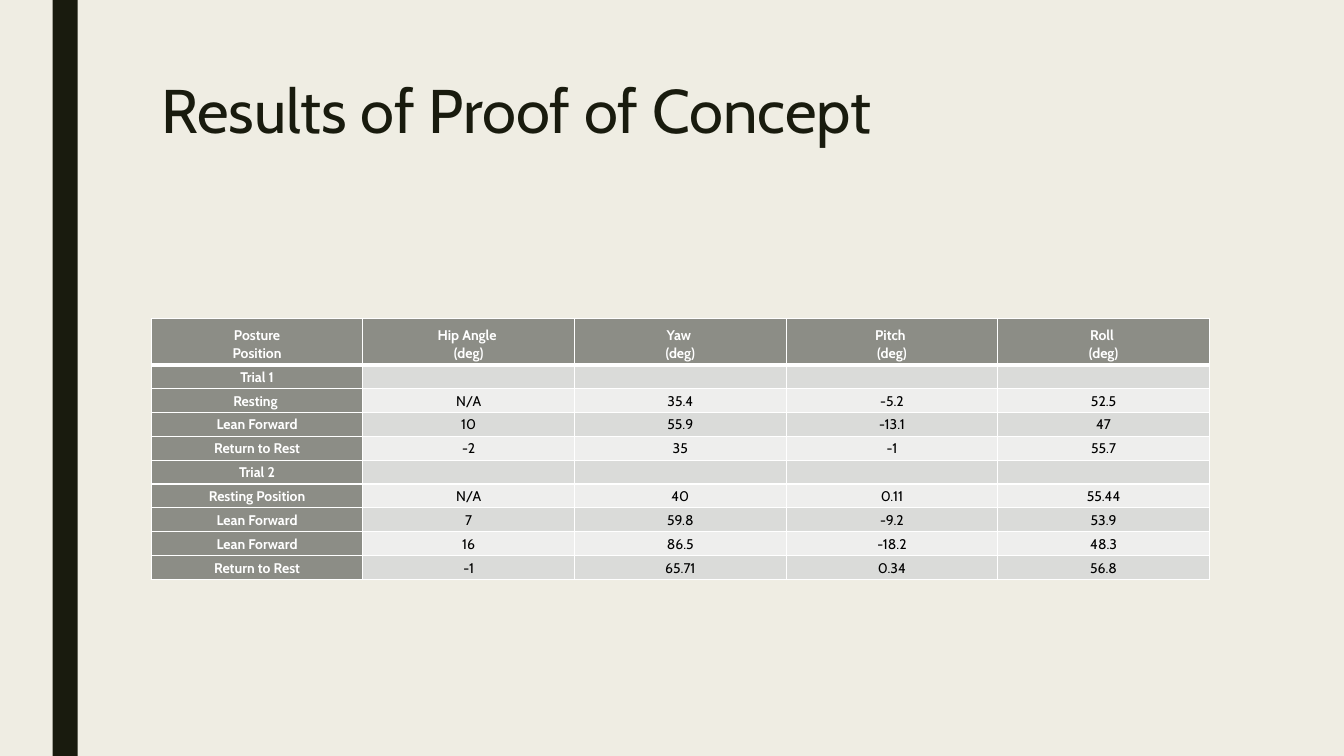
from dataclasses import dataclass

from lxml.etree import SubElement
from pptx import Presentation
from pptx.dml.color import RGBColor
from pptx.enum.shapes import MSO_SHAPE
from pptx.enum.text import MSO_ANCHOR, MSO_AUTO_SIZE, PP_ALIGN
from pptx.oxml.ns import qn
from pptx.slide import Slide
from pptx.table import _Cell
from pptx.util import Pt


@dataclass(frozen=True)
class Theme:
    font: str = "Cabin"
    background: str = "EFEDE3"
    ink: str = "191B0E"
    heading_fill: str = "8C8D86"
    bands: tuple[str, str] = ("DADBD9", "EEEEED")
    white: str = "FFFFFF"
    black: str = "000000"
    title_size: float = 44
    table_size: float = 10


@dataclass(frozen=True)
class Box:
    left: float
    top: float
    width: float
    height: float

    def lengths(self) -> tuple[Pt, Pt, Pt, Pt]:
        return Pt(self.left), Pt(self.top), Pt(self.width), Pt(self.height)


@dataclass(frozen=True)
class Reading:
    posture: str
    values: tuple[str, ...] = ("", "", "", "")


@dataclass(frozen=True)
class CellStyle:
    fill: str
    color: str
    bold: bool
    bottom_line: float = 1


THEME = Theme()
SLIDE_WIDTH, SLIDE_HEIGHT = 960, 540
SIDE_BAR = Box(37.5, 0, 18, SLIDE_HEIGHT)
TITLE_BOX = Box(108, 54, 756, 116.64)
TABLE_BOX = Box(108, 227.5, 756, 186.5)
HEADER_HEIGHT, CELL_MARGIN = 33, 2

HEADERS = ("Posture\nPosition", "Hip Angle \n(deg)", "Yaw \n(deg)", "Pitch \n(deg)", "Roll \n(deg)")
READINGS = (
    Reading("Trial 1"),
    Reading("Resting ", ("N/A", "35.4", "-5.2", "52.5")),
    Reading("Lean Forward", ("10", "55.9", "-13.1", "47")),
    Reading("Return to Rest", ("-2", "35", "-1", "55.7")),
    Reading("Trial 2"),
    Reading("Resting Position", ("N/A", "40", "0.11", "55.44")),
    Reading("Lean Forward", ("7", "59.8", "-9.2", "53.9")),
    Reading("Lean Forward", ("16", "86.5", "-18.2", "48.3")),
    Reading("Return to Rest", ("-1", "65.71", "0.34", "56.8")),
)


def apply(target: object, formats: dict[str, object]) -> None:
    for name, value in formats.items():
        setattr(target, name, value)


def add_side_bar(s: Slide) -> None:
    sp = s.shapes.add_shape(MSO_SHAPE.RECTANGLE, *SIDE_BAR.lengths())
    sp.shadow.inherit = False
    sp.fill.solid()
    sp.fill.fore_color.rgb = RGBColor.from_string(THEME.ink)
    sp.line.fill.background()


def add_title(s: Slide, text: str) -> None:
    sp = s.shapes.title
    apply(sp, dict(zip(("left", "top", "width", "height"), TITLE_BOX.lengths())))
    tf = sp.text_frame
    tf.text = text
    apply(tf, {"vertical_anchor": MSO_ANCHOR.TOP, "word_wrap": True, "auto_size": MSO_AUTO_SIZE.NONE})
    p = tf.paragraphs[0]
    apply(p, {"alignment": PP_ALIGN.LEFT, "line_spacing": 0.89})
    r = p.runs[0]
    apply(r.font, {"name": THEME.font, "size": Pt(THEME.title_size), "bold": False})
    r.font.color.rgb = RGBColor.from_string(THEME.ink)


def add_borders(cell: _Cell, bottom_line: float) -> None:
    tc_pr = cell._tc.get_or_add_tcPr()
    widths = {"a:lnL": 1, "a:lnR": 1, "a:lnT": 1, "a:lnB": bottom_line}
    for index, (tag, width) in enumerate(widths.items()):
        ln = SubElement(tc_pr, qn(tag), w=str(Pt(width)))
        fill = SubElement(ln, qn("a:solidFill"))
        SubElement(fill, qn("a:srgbClr"), val=THEME.white)
        tc_pr.insert(index, ln)  # borders come before the cell fill


def format_cell(cell: _Cell, text: str, style: CellStyle) -> None:
    cell.fill.solid()
    cell.fill.fore_color.rgb = RGBColor.from_string(style.fill)
    add_borders(cell, style.bottom_line)
    margins = ("margin_left", "margin_right", "margin_top", "margin_bottom")
    apply(cell, {"vertical_anchor": MSO_ANCHOR.BOTTOM, **dict.fromkeys(margins, Pt(CELL_MARGIN))})
    cell.text = text
    for p in cell.text_frame.paragraphs:
        apply(p, {"alignment": PP_ALIGN.CENTER, "line_spacing": 1.07})
        for r in p.runs:
            apply(r.font, {"name": THEME.font, "size": Pt(THEME.table_size), "bold": style.bold})
            r.font.color.rgb = RGBColor.from_string(style.color)
        if not p.runs:  # keeps empty rows as low as the filled ones
            SubElement(p._p, qn("a:endParaRPr"), sz=str(int(THEME.table_size * 100)))


def add_results_table(s: Slide) -> None:
    table = s.shapes.add_table(len(READINGS) + 1, len(HEADERS), *TABLE_BOX.lengths()).table
    for column in table.columns:
        column.width = Pt(TABLE_BOX.width / len(HEADERS))
    for row in table.rows:
        row.height = Pt((TABLE_BOX.height - HEADER_HEIGHT) / len(READINGS))
    table.rows[0].height = Pt(HEADER_HEIGHT)

    # Heading row
    top_style = CellStyle(THEME.heading_fill, THEME.white, True, bottom_line=3)
    for col, header in enumerate(HEADERS):
        format_cell(table.cell(0, col), header, top_style)

    # Posture column and banded readings
    side_style = CellStyle(THEME.heading_fill, THEME.white, True)
    for row, reading in enumerate(READINGS, start=1):
        format_cell(table.cell(row, 0), reading.posture, side_style)
        band_style = CellStyle(THEME.bands[(row - 1) % 2], THEME.black, False)
        for col, value in enumerate(reading.values, start=1):
            format_cell(table.cell(row, col), value, band_style)


def main() -> None:
    prs = Presentation()
    apply(prs, {"slide_width": Pt(SLIDE_WIDTH), "slide_height": Pt(SLIDE_HEIGHT)})
    s = prs.slides.add_slide(prs.slide_layouts[5])
    s.background.fill.solid()
    s.background.fill.fore_color.rgb = RGBColor.from_string(THEME.background)
    add_side_bar(s)
    add_title(s, "Results of Proof of Concept")
    add_results_table(s)
    prs.save("out.pptx")


if __name__ == "__main__":
    main()
